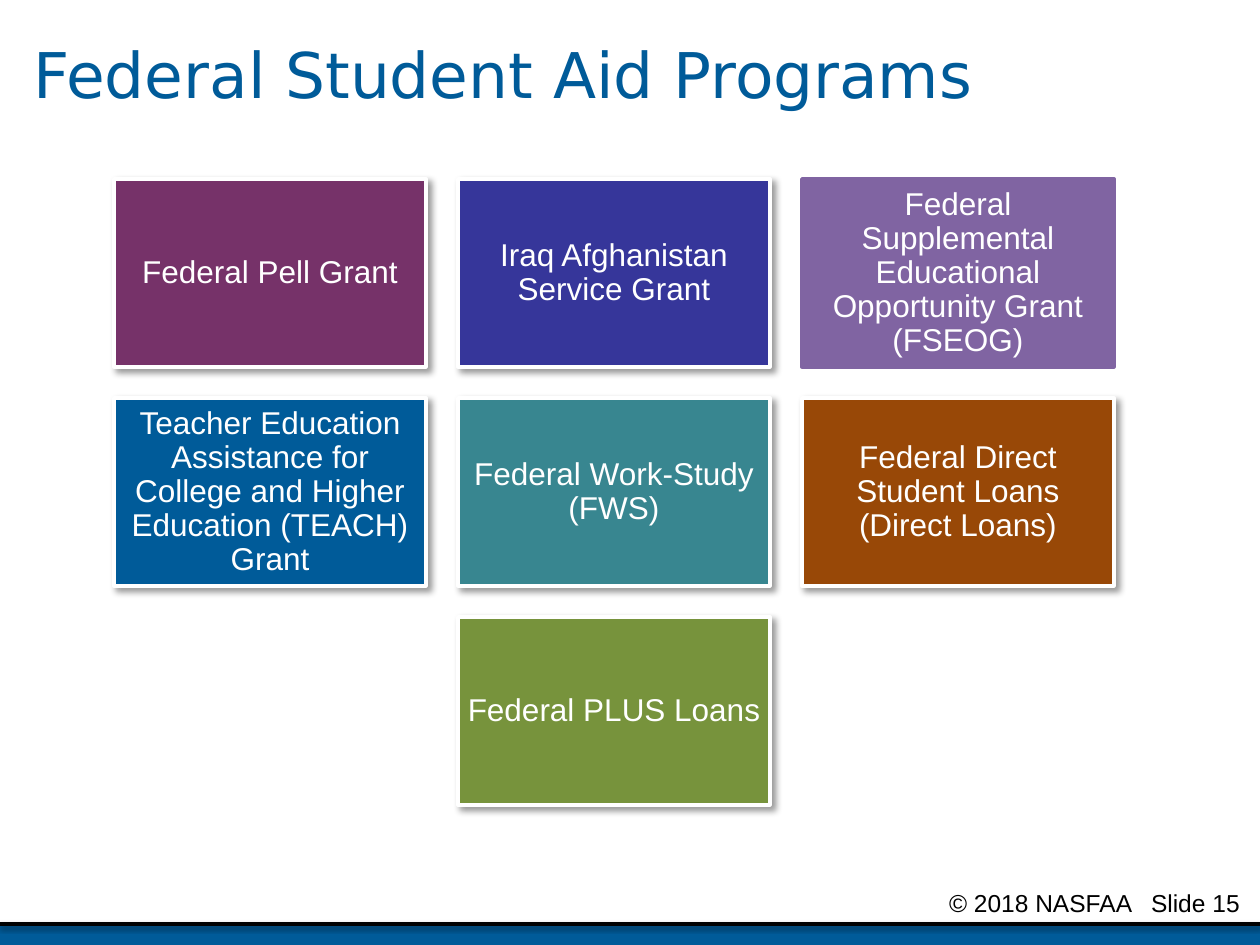
from lxml import etree
from pptx import Presentation
from pptx.dml.color import RGBColor
from pptx.enum.shapes import MSO_CONNECTOR, MSO_SHAPE
from pptx.enum.text import MSO_ANCHOR, PP_ALIGN
from pptx.oxml.ns import qn
from pptx.util import Pt

PX = 914400 / 126
WIDTH, HEIGHT = 1260, 945

BLACK = RGBColor(0x00, 0x00, 0x00)
WHITE = RGBColor(0xFF, 0xFF, 0xFF)
BLUE = RGBColor(0x00, 0x5B, 0x99)
PLUM = RGBColor(0x76, 0x32, 0x69)
INDIGO = RGBColor(0x36, 0x36, 0x9A)
PURPLE = RGBColor(0x80, 0x64, 0xA2)
TEAL = RGBColor(0x38, 0x86, 0x90)
BROWN = RGBColor(0x98, 0x48, 0x07)
GREEN = RGBColor(0x77, 0x93, 0x3C)

# Tile grid
LEFT, TOP = 114, 179
TILE_W, TILE_H = 312, 188
STEP_X, STEP_Y = 344, 219

# Column, row, fill, outline, text
PROGRAMS = [
    (0, 0, PLUM, WHITE, "Federal Pell Grant"),
    (1, 0, INDIGO, WHITE, "Iraq Afghanistan Service Grant"),
    (2, 0, PURPLE, PURPLE,
     "Federal Supplemental Educational Opportunity Grant (FSEOG)"),
    (0, 1, BLUE, WHITE,
     "Teacher Education Assistance for College and Higher Education (TEACH) Grant"),
    (1, 1, TEAL, WHITE, "Federal Work-Study (FWS)"),
    (2, 1, BROWN, WHITE, "Federal Direct Student Loans (Direct Loans)"),
    (1, 2, GREEN, WHITE, "Federal PLUS Loans"),
]


def px(n):
    return round(n * PX)


def add_shadow(s, blur, dist, angle, alpha):
    spPr = s._element.spPr
    for old in spPr.findall(qn("a:effectLst")):
        spPr.remove(old)
    effects = etree.SubElement(spPr, qn("a:effectLst"))
    shadow = etree.SubElement(
        effects, qn("a:outerShdw"), blurRad=str(Pt(blur)), dist=str(Pt(dist)),
        dir=str(angle * 60000), algn="t", rotWithShape="0")
    color = etree.SubElement(shadow, qn("a:srgbClr"), val=str(BLACK))
    etree.SubElement(color, qn("a:alpha"), val=str(alpha * 1000))


def write(p, text, font, size, color):
    r = p.add_run()
    r.text = text
    r.font.name = font
    r.font.size = Pt(size)
    r.font.color.rgb = color


def add_text_box(slide, x, y, w, h):
    tf = slide.shapes.add_textbox(px(x), px(y), px(w), px(h)).text_frame
    tf.word_wrap = True
    return tf


def add_rect(slide, x, y, w, h, fill):
    s = slide.shapes.add_shape(MSO_SHAPE.RECTANGLE, px(x), px(y), px(w), px(h))
    s.shadow.inherit = False
    s.fill.solid()
    s.fill.fore_color.rgb = fill
    s.line.fill.background()
    return s


def add_title(slide, text):
    tf = add_text_box(slide, 21, 0, 1218, 157)
    tf.vertical_anchor = MSO_ANCHOR.MIDDLE
    p = tf.paragraphs[0]
    p.line_spacing = 0.9
    write(p, text, "DejaVu Sans", 36, BLUE)


def add_tile(slide, col, row, fill, outline, text):
    s = add_rect(slide, LEFT + col * STEP_X, TOP + row * STEP_Y, TILE_W, TILE_H, fill)
    s.line.color.rgb = outline
    s.line.width = Pt(2)
    if outline == WHITE:
        add_shadow(s, 4, 3, 45, 40)
    tf = s.text_frame
    tf.word_wrap = True
    tf.vertical_anchor = MSO_ANCHOR.MIDDLE
    tf.margin_left = tf.margin_right = tf.margin_top = tf.margin_bottom = px(9)
    p = tf.paragraphs[0]
    p.alignment = PP_ALIGN.CENTER
    p.line_spacing = 0.9
    write(p, text, "Arial", 18, WHITE)


def add_footer(slide):
    # Band with a black rule on its top edge
    add_rect(slide, 0, 924, WIDTH, HEIGHT - 924, BLUE)
    rule = slide.shapes.add_connector(
        MSO_CONNECTOR.STRAIGHT, 0, px(924), px(WIDTH), px(924))
    rule.line.color.rgb = BLACK
    rule.line.width = Pt(2)
    add_shadow(rule, 3.1, 1.6, 90, 38)

    # Copyright line, with a tab stop before the slide number
    tf = add_text_box(slide, 788, 882, 472, 32)
    tf.margin_left = px(161)
    tf.margin_right = 0
    p = tf.paragraphs[0]
    tabs = etree.SubElement(p._p.get_or_add_pPr(), qn("a:tabLst"))
    etree.SubElement(tabs, qn("a:tab"), pos=str(px(202)), algn="l")
    write(p, "© 2018 NASFAA\tSlide 15", "Arial", 14, BLACK)


def main():
    prs = Presentation()
    prs.slide_width, prs.slide_height = px(WIDTH), px(HEIGHT)
    slide = prs.slides.add_slide(prs.slide_layouts[6])
    add_footer(slide)
    add_title(slide, "Federal Student Aid Programs")
    for program in PROGRAMS:
        add_tile(slide, *program)
    prs.save("out.pptx")


if __name__ == "__main__":
    main()
